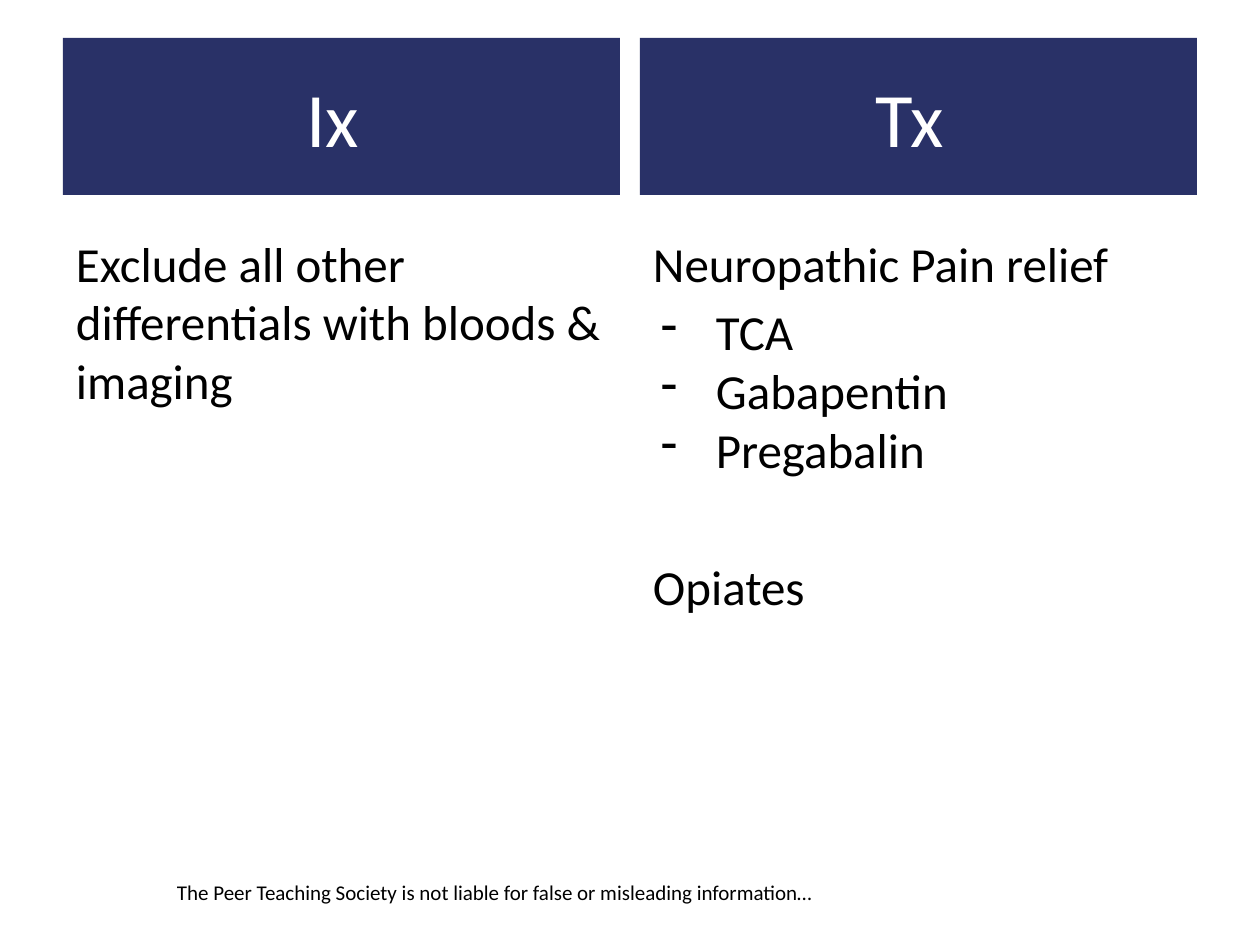
from pptx import Presentation
from pptx.dml.color import RGBColor
from pptx.enum.shapes import MSO_SHAPE
from pptx.enum.text import MSO_ANCHOR, PP_ALIGN
from pptx.oxml.ns import qn
from pptx.util import Pt
from lxml import etree

RECTANGLE = MSO_SHAPE.RECTANGLE
TOP, MIDDLE = MSO_ANCHOR.TOP, MSO_ANCHOR.MIDDLE
LEFT, CENTER = PP_ALIGN.LEFT, PP_ALIGN.CENTER

NAVY = RGBColor(0x29, 0x31, 0x67)
WHITE = RGBColor(0xFF, 0xFF, 0xFF)
BLACK = RGBColor(0x00, 0x00, 0x00)

PX_PER_INCH = 126
SLIDE_WIDTH, SLIDE_HEIGHT = 1260, 945
MARGIN, COLUMN_WIDTH, COLUMN_GAP = 63, 557, 20
HEADER_TOP, HEADER_HEIGHT = 38, 157
BODY_TOP, BODY_HEIGHT = 220, 624
INSET = 13

# Each column: heading, then paragraphs as (text, is dashed, space before in points)
COLUMNS = [
    ("Ix ", [("Exclude all other differentials with bloods & imaging", False, 0)]),
    ("Tx ", [
        ("Neuropathic Pain relief", False, 0),
        ("TCA", True, 5.6),
        ("Gabapentin", True, 0),
        ("Pregabalin", True, 0),
        ("Opiates", False, 45),
    ]),
]
DISCLAIMER = "The Peer Teaching Society is not liable for false or misleading information…"


def emu(px):
    return round(px * 914400 / PX_PER_INCH)


class SlideWriter:
    font_name = "Calibri"

    def __init__(self, slide):
        self.slide = slide

    def prepare_frame(self, shape, anchor=TOP, inset_y=INSET):
        frame = shape.text_frame
        frame.word_wrap = True
        frame.vertical_anchor = anchor
        frame.margin_left = frame.margin_right = emu(INSET)
        frame.margin_top = frame.margin_bottom = emu(inset_y)
        return frame

    def style(self, para, text, size, color, align=LEFT):
        para.text = text
        para.alignment = align
        para.font.name = self.font_name
        para.font.size = Pt(size)
        para.font.color.rgb = color

    def add_dash(self, para):
        """Give the paragraph a hanging dash bullet."""
        properties = para._p.get_or_add_pPr()
        properties.set("marL", str(emu(63)))
        properties.set("indent", str(emu(-55)))
        etree.SubElement(properties, qn("a:buChar")).set("char", "-")

    def header(self, text, left, top, width, height):
        box = self.slide.shapes.add_shape(
            RECTANGLE, emu(left), emu(top), emu(width), emu(height))
        box.shadow.inherit = False
        box.fill.solid()
        box.fill.fore_color.rgb = NAVY
        box.line.fill.background()
        frame = self.prepare_frame(box, MIDDLE)
        self.style(frame.paragraphs[0], text, 44, WHITE, CENTER)

    def text(self, paragraphs, left, top, width, height, size, inset_y=INSET):
        box = self.slide.shapes.add_textbox(
            emu(left), emu(top), emu(width), emu(height))
        frame = self.prepare_frame(box, inset_y=inset_y)
        for index, (text, dashed, space_before) in enumerate(paragraphs):
            para = frame.add_paragraph() if index else frame.paragraphs[0]
            para.space_before = Pt(space_before)
            if dashed:
                self.add_dash(para)
            self.style(para, text, size, BLACK)


def main():
    deck = Presentation()
    deck.slide_width, deck.slide_height = emu(SLIDE_WIDTH), emu(SLIDE_HEIGHT)
    writer = SlideWriter(deck.slides.add_slide(deck.slide_layouts[6]))

    writer.text([(DISCLAIMER, False, 0)], 164, 874, 698, 38, size=12, inset_y=6)
    for index, (heading, paragraphs) in enumerate(COLUMNS):
        left = MARGIN + index * (COLUMN_WIDTH + COLUMN_GAP)
        writer.header(heading, left, HEADER_TOP, COLUMN_WIDTH, HEADER_HEIGHT)
        writer.text(paragraphs, left, BODY_TOP, COLUMN_WIDTH, BODY_HEIGHT, size=28)

    deck.save("out.pptx")


if __name__ == "__main__":
    main()
